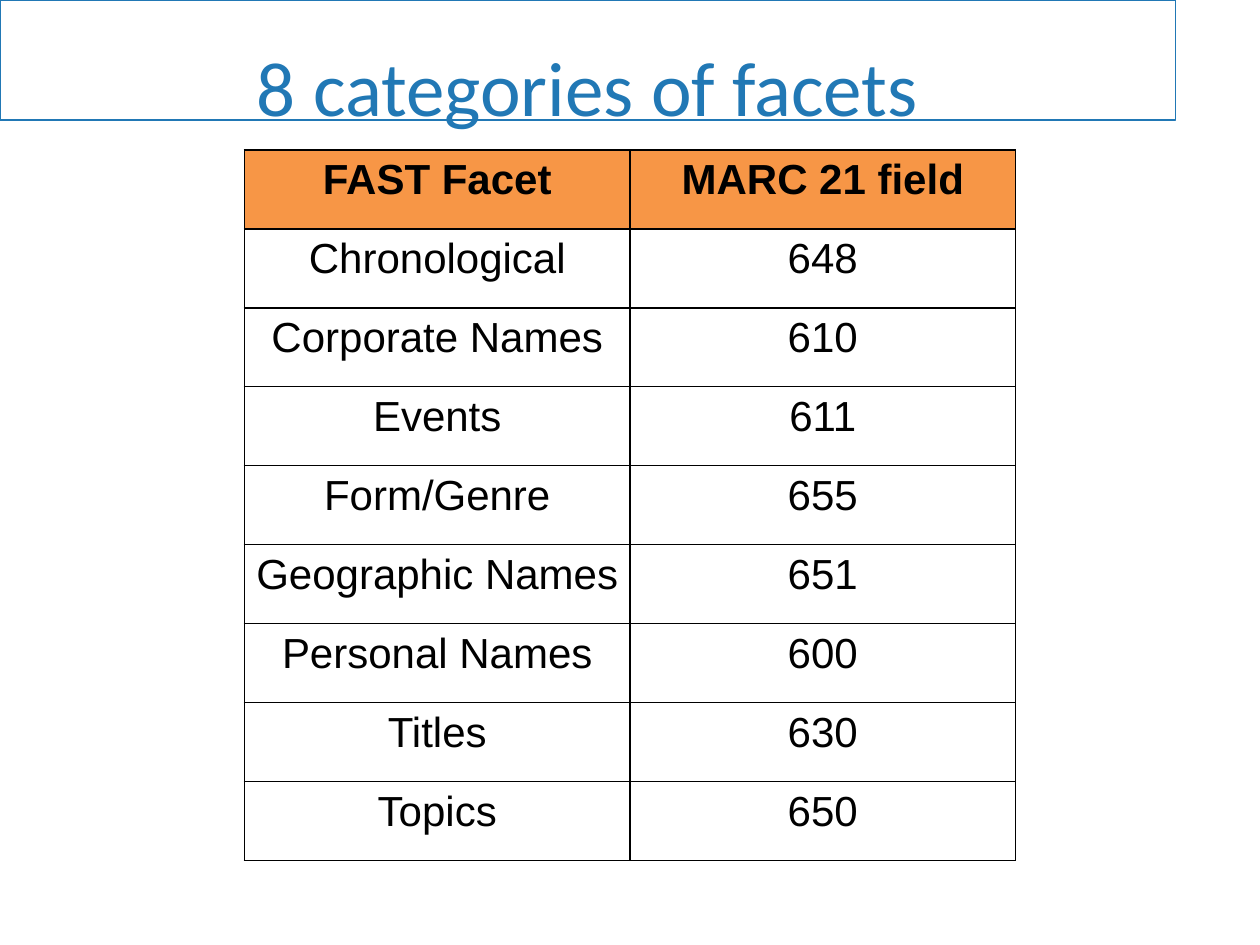
from lxml import etree
from pptx import Presentation
from pptx.dml.color import RGBColor
from pptx.enum.text import MSO_ANCHOR, MSO_AUTO_SIZE, PP_ALIGN
from pptx.oxml.ns import qn
from pptx.util import Inches, Pt


def rgb(color):
    return RGBColor.from_string(color)


def add_borders(cell, color, width):
    """Draw all four edges; called before the fill, which must follow the edges."""
    properties = cell._tc.get_or_add_tcPr()
    for edge in ("a:lnL", "a:lnR", "a:lnT", "a:lnB"):
        line = etree.SubElement(properties, qn(edge), w=str(Pt(width)))
        fill = etree.SubElement(line, qn("a:solidFill"))
        etree.SubElement(fill, qn("a:srgbClr"), val=color)


BLUE = "2178B5"
ORANGE = "F79646"
BLACK = "000000"

facets = [
    ("FAST Facet", "MARC 21 field"),
    ("Chronological", "648"),
    ("Corporate Names", "610"),
    ("Events", "611"),
    ("Form/Genre", "655"),
    ("Geographic Names", "651"),
    ("Personal Names", "600"),
    ("Titles", "630"),
    ("Topics", "650"),
]

prs = Presentation()
prs.slide_width = Inches(10)
prs.slide_height = Inches(7.5)
slide = prs.slides.add_slide(prs.slide_layouts[5])

# Title
title = slide.shapes.title
title.left, title.top = Inches(0), Inches(0)
title.width, title.height = Inches(9.33), Inches(0.95)
title.line.color.rgb = rgb(BLUE)
title.line.width = Pt(1)
heading = title.text_frame
heading.text = "8 categories of facets"
heading.word_wrap = True
heading.auto_size = MSO_AUTO_SIZE.NONE
heading.vertical_anchor = MSO_ANCHOR.TOP
heading.margin_left = heading.margin_right = Inches(0.5)
heading.margin_top = Inches(0.4)
heading.margin_bottom = Inches(0.35)
heading_line = heading.paragraphs[0]
heading_line.alignment = PP_ALIGN.CENTER
heading_line.line_spacing = 0.9
heading_font = heading_line.runs[0].font
heading_font.name = "Calibri"
heading_font.size = Pt(44)
heading_font.color.rgb = rgb(BLUE)

# Facets and their fields
facet_table = slide.shapes.add_table(
    len(facets), 2, Inches(1.94), Inches(1.19), Inches(6.12), Inches(5.64)
).table
for row_index, row in enumerate(facets):
    is_header = row_index == 0
    for column_index, label in enumerate(row):
        cell = facet_table.cell(row_index, column_index)
        cell.margin_left = cell.margin_right = Inches(0.07)
        cell.margin_top = cell.margin_bottom = Inches(0)
        add_borders(cell, BLACK, 1)
        if is_header:
            cell.fill.solid()
            cell.fill.fore_color.rgb = rgb(ORANGE)
        else:
            cell.fill.background()
        cell.text_frame.text = label
        paragraph = cell.text_frame.paragraphs[0]
        paragraph.alignment = PP_ALIGN.CENTER
        paragraph.line_spacing = 1.15
        paragraph.space_after = Pt(6)
        font = paragraph.runs[0].font
        font.name = "Arial"
        font.size = Pt(24)
        font.bold = is_header
        font.color.rgb = rgb(BLACK)

prs.save("out.pptx")
